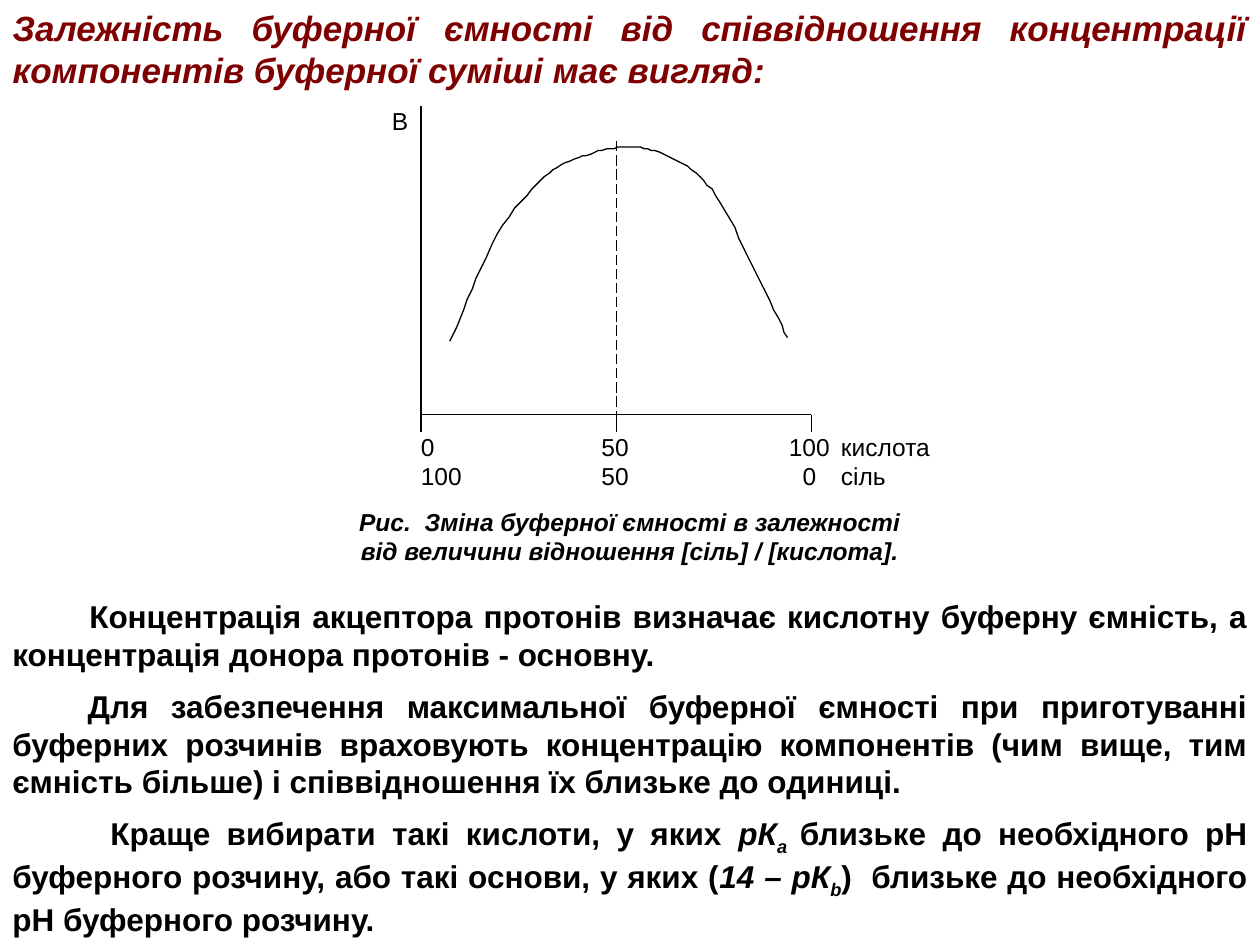
from lxml.etree import SubElement
from pptx import Presentation
from pptx.dml.color import RGBColor
from pptx.enum.dml import MSO_LINE
from pptx.enum.shapes import MSO_CONNECTOR
from pptx.enum.text import MSO_ANCHOR, MSO_AUTO_SIZE, PP_ALIGN
from pptx.oxml.ns import qn
from pptx.util import Pt

COLORS = {"title": "7E0000", "ink": "000000"}
FONT = "Arial"
WIDTH, HEIGHT = 720, 540

TITLE = ("Залежність буферної ємності від співвідношення концентрації "
         "компонентів буферної суміші має вигляд:")
SCALE = ["0\t50\t100\tкислота", "100\t50\t0\tсіль"]
TABS = [(111, "ctr"), (222, "ctr"), (240, "l")]
CAPTION = ["Рис.  Зміна буферної ємності в залежності",
           "від величини відношення [сіль] / [кислота]."]

# First-line indent, then (text, style) runs: "i" italic, "s" italic subscript
NOTES = [
    (44, [("Концентрація акцептора протонів визначає кислотну буферну "
           "ємність, а концентрація донора протонів - основну.", "")]),
    (43, [("Для забезпечення максимальної буферної ємності при приготуванні "
           "буферних розчинів враховують концентрацію компонентів (чим вище, "
           "тим ємність більше) і співвідношення їх близьке до одиниці.", "")]),
    (56, [("Краще вибирати такі кислоти, у яких ", ""), ("рК", "i"),
          ("а ", "s"),
          ("близьке до необхідного рН буферного розчину, або такі основи, "
           "у яких (", ""), ("14 – рК", "i"), ("b", "s"),
          (")  близьке до необхідного рН буферного розчину.", "")]),
]

# Plot frame, and the curve as a start point and Bezier triples
LEFT, RIGHT, TOP, BASE, TICK = 240.5, 463.7, 60.5, 236.9, 10
MID = (LEFT + RIGHT) / 2
PEAK = 80.6
START = (450, 193)
CURVE = [
    [(442.8, 179.3), (421.2, 129.6), (409, 111.6)],
    [(396, 93.6), (385.9, 90.7), (374.4, 86.4)],
    [(362.9, 82.8), (352.1, 83.5), (339.8, 87.1)],
    [(327.6, 91.4), (314.6, 93.6), (301, 111.6)],
    [(282.2, 127.4), (265.7, 177.8), (257, 195.1)],
]
STEPS = 16


def style(run, size, color="ink", bold=False, italic=False):
    font = run.font
    font.name, font.size = FONT, Pt(size)
    font.bold, font.italic = bold, italic
    font.color.rgb = RGBColor.from_string(COLORS[color])


def add_text(shapes, box, lines, size, align=PP_ALIGN.LEFT, inset=True, **look):
    frame = shapes.add_textbox(*map(Pt, box)).text_frame
    frame.word_wrap = True
    if not inset:
        frame.margin_left = frame.margin_right = 0
        frame.margin_top = frame.margin_bottom = 0
    frame.text = "\n".join(lines)
    for para in frame.paragraphs:
        para.alignment = align
        for run in para.runs:
            style(run, size, **look)
    return frame


def add_line(shapes, x1, y1, x2, y2, width=0.75):
    line = shapes.add_connector(MSO_CONNECTOR.STRAIGHT, *map(Pt, (x1, y1, x2, y2)))
    line.line.width = Pt(width)
    line.line.color.rgb = RGBColor.from_string(COLORS["ink"])
    SubElement(line._element.spPr, qn("a:effectLst"))
    return line


def trace():
    """Return points along the Bezier pieces of the curve."""
    points, p0 = [], START
    for p1, p2, p3 in CURVE:
        for step in range(1, STEPS + 1):
            t = step / STEPS
            u = 1 - t
            points.append(tuple(
                u**3 * a + 3 * u * u * t * b + 3 * u * t * t * c + t**3 * d
                for a, b, c, d in zip(p0, p1, p2, p3)))
        p0 = p3
    return points


def add_title(slide):
    title = slide.shapes.title
    title.left, title.top, title.width, title.height = map(Pt, (0, 0, WIDTH, 80))
    frame = title.text_frame
    frame.text = TITLE
    frame.word_wrap = True
    frame.auto_size = MSO_AUTO_SIZE.NONE
    frame.vertical_anchor = MSO_ANCHOR.TOP
    para = frame.paragraphs[0]
    para.alignment = PP_ALIGN.JUSTIFY
    style(para.runs[0], 20, "title", True, True)


def add_plot(slide):
    shapes = slide.shapes.add_group_shape().shapes
    add_line(shapes, LEFT, TOP, LEFT, BASE, 1)
    add_line(shapes, LEFT, BASE, RIGHT, BASE, 1)

    pen = shapes.build_freeform(*START, scale=Pt(1))
    pen.add_line_segments(trace(), close=False)
    curve = pen.convert_to_shape()
    curve.shadow.inherit = False
    curve.fill.background()
    curve.line.width = Pt(0.75)
    curve.line.color.rgb = RGBColor.from_string(COLORS["ink"])

    add_line(shapes, MID, PEAK, MID, BASE).line.dash_style = MSO_LINE.LONG_DASH
    for x in (LEFT, MID, RIGHT):
        add_line(shapes, x, BASE, x, BASE + TICK)

    scale = add_text(shapes, (LEFT, BASE + TICK, 335, 40), SCALE, 14, inset=False)
    for para in scale.paragraphs:
        tabs = SubElement(para._p.get_or_add_pPr(), qn("a:tabLst"))
        for pos, kind in TABS:
            SubElement(tabs, qn("a:tab"), pos=str(Pt(pos)), algn=kind)
    add_text(shapes, (224, TOP, 16.5, 21), ["В"], 14, inset=False)


def add_notes(slide):
    frame = add_text(slide.shapes, (0, 337.7, WIDTH, 203), [""] * len(NOTES), 18,
                     PP_ALIGN.JUSTIFY)
    for para, (indent, runs) in zip(frame.paragraphs, NOTES):
        para.space_before = Pt(8)
        para._p.get_or_add_pPr().set("indent", str(Pt(indent)))
        for text, kind in runs:
            run = para.add_run()
            run.text = text
            style(run, 18, bold=True, italic=bool(kind))
            if kind == "s":
                run._r.get_or_add_rPr().set("baseline", "-25000")


def main():
    deck = Presentation()
    deck.slide_width, deck.slide_height = Pt(WIDTH), Pt(HEIGHT)
    slide = deck.slides.add_slide(deck.slide_layouts[5])
    add_title(slide)
    add_plot(slide)
    add_text(slide.shapes, (0, 286, WIDTH, 41), CAPTION, 14, PP_ALIGN.CENTER,
             bold=True, italic=True)
    add_notes(slide)
    deck.save("out.pptx")


if __name__ == "__main__":
    main()
